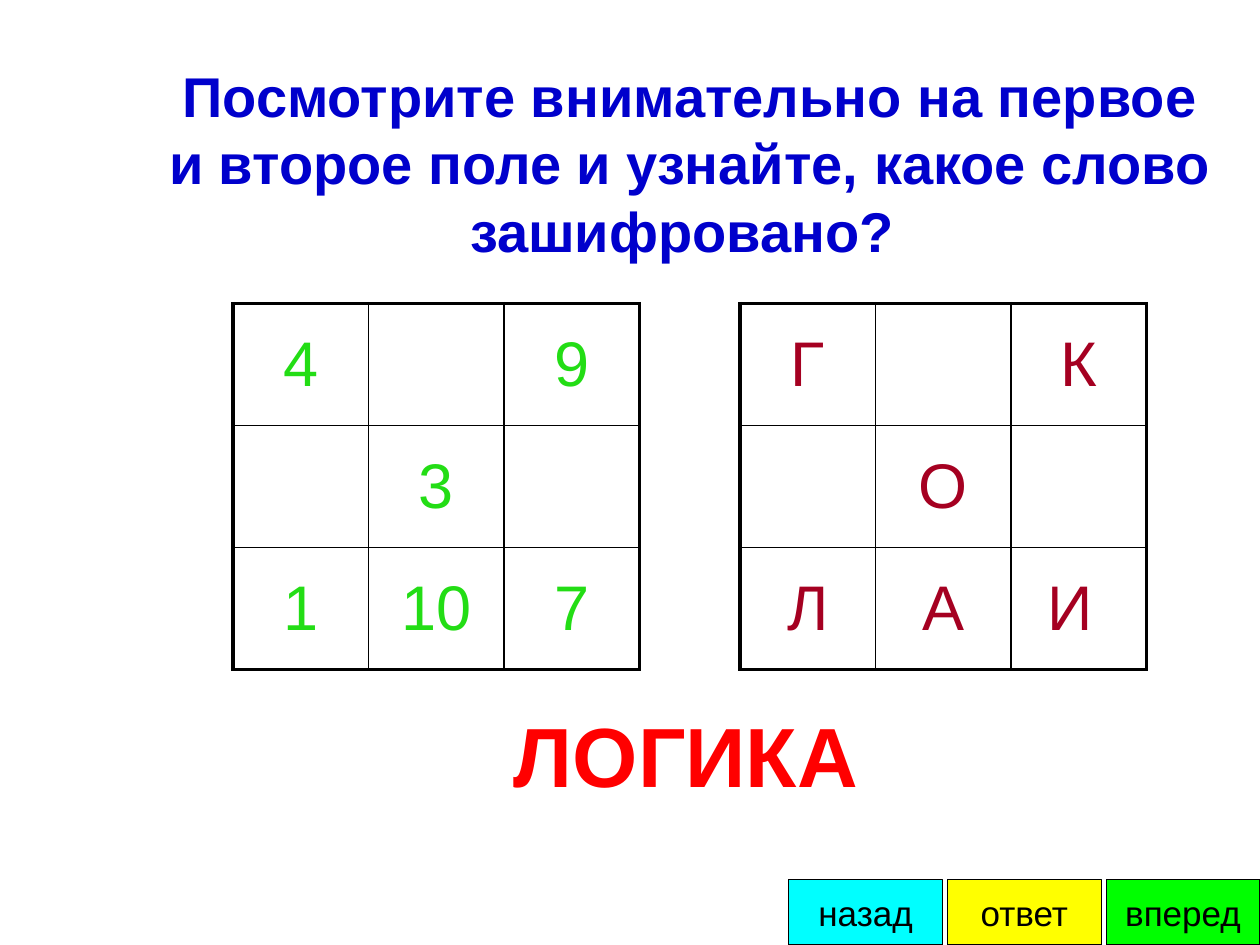
"""Builds a puzzle slide with two grids, the hidden word and three buttons."""
from lxml import etree
from pptx import Presentation
from pptx.dml.color import RGBColor
from pptx.enum.shapes import MSO_SHAPE
from pptx.enum.text import MSO_ANCHOR, PP_ALIGN
from pptx.oxml.ns import qn
from pptx.util import Cm, Pt

RECTANGLE = MSO_SHAPE.RECTANGLE
MIDDLE = MSO_ANCHOR.MIDDLE
LEFT, CENTER = PP_ALIGN.LEFT, PP_ALIGN.CENTER

BLACK = RGBColor(0x00, 0x00, 0x00)
WHITE = RGBColor(0xFF, 0xFF, 0xFF)
BLUE = RGBColor(0x00, 0x00, 0xCC)
RED = RGBColor(0xFF, 0x00, 0x00)
DIGIT_GREEN = RGBColor(0x23, 0xDD, 0x15)
LETTER_RED = RGBColor(0xA5, 0x00, 0x21)
CYAN = RGBColor(0x00, 0xFF, 0xFF)
YELLOW = RGBColor(0xFF, 0xFF, 0x00)
GREEN = RGBColor(0x00, 0xFF, 0x00)

FONT = "Arial"
QUESTION = "Посмотрите внимательно на первое и второе поле и узнайте, какое слово зашифровано? "
ANSWER = "ЛОГИКА"
GRIDS = [
    (4.7, DIGIT_GREEN, [["4", "", "9"], ["", "3", ""], ["1", "10", "7"]]),
    (14.92, LETTER_RED, [["Г", "", "К"], ["", "О", ""], ["Л", "А", "И "]]),
]
BUTTONS = [("назад", CYAN), ("ответ", YELLOW), ("вперед", GREEN)]

PAGE_WIDTH, PAGE_HEIGHT = 25.4, 19.05
GRID_TOP, CELL_WIDTH, CELL_HEIGHT = 6.12, 2.73, 2.46
BUTTON_WIDTH, BUTTON_HEIGHT, BUTTON_GAP = 3.1, 1.32, 0.1
THICK, THIN = Pt(2.25), Pt(1)


def write(frame, text, size, color, align=CENTER, bold=False):
    para = frame.paragraphs[0]
    para.alignment = align
    span = para.add_run()
    span.text = text
    span.font.name = FONT
    span.font.size = Pt(size)
    span.font.bold = bold
    span.font.color.rgb = color


def add_text(page, text, area, size, color, align, wrap):
    box = page.shapes.add_textbox(*[Cm(length) for length in area])
    box.text_frame.word_wrap = wrap
    write(box.text_frame, text, size, color, align, bold=True)


def set_borders(cell, widths):
    properties = cell._tc.get_or_add_tcPr()
    for position, (side, width) in enumerate(widths.items()):
        line = etree.Element(qn(f"a:{side}"), w=str(width))
        fill = etree.SubElement(line, qn("a:solidFill"))
        etree.SubElement(fill, qn("a:srgbClr"), val=str(BLACK))
        properties.insert(position, line)


def add_grid(page, left, color, rows):
    count = len(rows)
    table = page.shapes.add_table(
        count, count, Cm(left), Cm(GRID_TOP), Cm(count * CELL_WIDTH), Cm(count * CELL_HEIGHT)
    ).table
    table.first_row = table.horz_banding = False
    for row, values in enumerate(rows):
        for column, value in enumerate(values):
            cell = table.cell(row, column)
            cell.fill.solid()
            cell.fill.fore_color.rgb = WHITE
            cell.vertical_anchor = MIDDLE
            outer = {
                "lnL": column == 0,
                "lnR": column == count - 1,
                "lnT": row == 0,
                "lnB": row == count - 1,
            }
            set_borders(cell, {side: THICK if edge else THIN for side, edge in outer.items()})
            if value:
                write(cell.text_frame, value, 36, color)


def add_button(page, label, color, left):
    button = page.shapes.add_shape(
        RECTANGLE, Cm(left), Cm(PAGE_HEIGHT - BUTTON_HEIGHT), Cm(BUTTON_WIDTH), Cm(BUTTON_HEIGHT)
    )
    button.shadow.inherit = False
    button.fill.solid()
    button.fill.fore_color.rgb = color
    button.line.color.rgb = BLACK
    button.line.width = Pt(0.75)
    button.text_frame.word_wrap = False
    button.text_frame.vertical_anchor = MIDDLE
    write(button.text_frame, label, 20, BLACK)


def main():
    deck = Presentation()
    deck.slide_width, deck.slide_height = Cm(PAGE_WIDTH), Cm(PAGE_HEIGHT)
    page = deck.slides.add_slide(deck.slide_layouts[6])
    add_text(page, QUESTION, (3.1, 1.12, 21.62, 4.32), 32, BLUE, CENTER, True)
    for left, color, rows in GRIDS:
        add_grid(page, left, color, rows)
    add_text(page, ANSWER, (10.11, 14.05, 7.44, 2.29), 48, RED, LEFT, False)
    step = BUTTON_WIDTH + BUTTON_GAP
    start = PAGE_WIDTH + BUTTON_GAP - len(BUTTONS) * step
    for index, (label, color) in enumerate(BUTTONS):
        add_button(page, label, color, start + index * step)
    deck.save("out.pptx")


if __name__ == "__main__":
    main()
